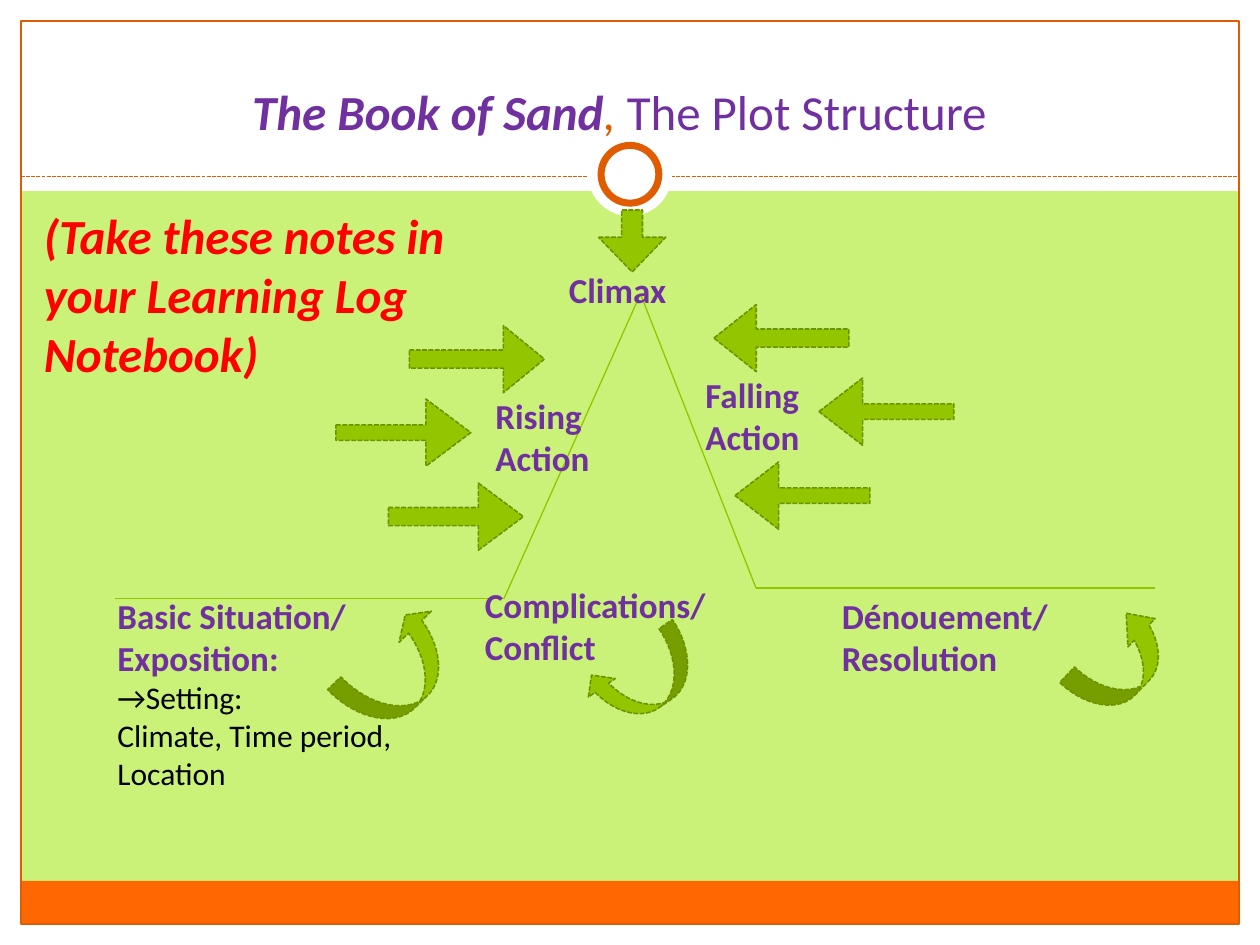
from lxml.etree import SubElement
from pptx import Presentation
from pptx.dml.color import RGBColor
from pptx.enum.dml import MSO_LINE
from pptx.enum.shapes import MSO_CONNECTOR, MSO_SHAPE
from pptx.enum.text import MSO_ANCHOR, PP_ALIGN
from pptx.oxml.ns import qn
from pptx.util import Inches, Pt

WHITE, GREEN, DARK_GREEN = "FFFFFF", "94C600", "6D9200"
ORANGE, PURPLE, RED, BLACK = "E15B00", "7030A0", "FF0000", "000000"
color = RGBColor.from_string

presentation = Presentation()
presentation.slide_width, presentation.slide_height = Inches(10), Inches(7.5)
cell = presentation.slide_width / 120  # grid of 120 columns by 90 rows

slide = presentation.slides.add_slide(presentation.slide_layouts[5])
slide.background.fill.solid()
slide.background.fill.fore_color.rgb = color("CAF278")


def add_figure(kind, box, fill=None, line=None, weight=0.75):
    """Add a preset shape; box is left, top, width, height in grid cells."""
    shape = slide.shapes.add_shape(kind, *[round(v * cell) for v in box])
    shape.shadow.inherit = False
    if fill:
        shape.fill.solid()
        shape.fill.fore_color.rgb = color(fill)
    else:
        shape.fill.background()
    if line:
        shape.line.color.rgb = color(line)
        shape.line.width = Pt(weight)
    else:
        shape.line.fill.background()
    return shape


def add_line(start, end, stroke):
    points = [round(v * cell) for v in (*start, *end)]
    connector = slide.shapes.add_connector(MSO_CONNECTOR.STRAIGHT, *points)
    connector.line.color.rgb = color(stroke)
    connector.line.width = Pt(0.75)
    SubElement(connector.element.spPr, qn("a:effectLst"))
    return connector


# White margins, footer band and frame
for margin in [(0, 88, 120, 2), (0, 0, 120, 18.2), (0, 0, 2, 90), (118, 0, 2, 90)]:
    add_figure(MSO_SHAPE.RECTANGLE, margin, WHITE)
add_figure(MSO_SHAPE.RECTANGLE, (2, 83.9, 116, 4.1), "FF6700")
add_figure(MSO_SHAPE.RECTANGLE, (2, 2, 116, 86), line=ORANGE)

# Dashed divider with its ring
divider = add_line((2, 16.8), (118, 16.8), ORANGE)
divider.line.dash_style = MSO_LINE.SQUARE_DOT
add_figure(MSO_SHAPE.OVAL, (56, 12.6, 8, 8), WHITE)
add_figure(MSO_SHAPE.OVAL, (57.25, 13.85, 5.5, 5.5), WHITE, ORANGE, 4)

# Title, brought in front of the header band
title = slide.shapes.title
title.element.getparent().append(title.element)
title.left, title.top, title.width, title.height = [
    round(v * cell) for v in (5, 3, 108, 11)]
title.text_frame.vertical_anchor = MSO_ANCHOR.BOTTOM
paragraph = title.text_frame.paragraphs[0]
paragraph.alignment = PP_ALIGN.CENTER
for text, tint, bold, italic in [
    ("The Book of Sand", PURPLE, True, True),
    (", ", ORANGE, False, True),
    ("The Plot Structure", PURPLE, False, False),
]:
    run = paragraph.add_run()
    run.text = text
    run.font.name, run.font.size = "Calibri", Pt(28)
    run.font.bold, run.font.italic = bold, italic
    run.font.color.rgb = color(tint)

# Plot line
plot_points = [(11, 57), (48, 57), (61, 28), (72, 56), (110, 56)]
for start, end in zip(plot_points, plot_points[1:]):
    add_line(start, end, GREEN)

# Labels: box, then paragraphs of text, size, colour, bold, italic
heading = (20, PURPLE, True, False)
detail = (18, BLACK, False, False)
note = (28, RED, True, True)
labels = [
    ((10, 56, 33, 23.9), [("Basic Situation/", heading), ("Exposition:", heading),
                          ("→Setting:", detail),
                          ("Climate, Time period, Location", detail)]),
    ((45, 55, 26, 9.3), [("Complications/", heading), ("Conflict", heading)]),
    ((46, 37, 18, 9.3), [("Rising Action", heading)]),
    ((53, 25, 15, 5.3), [("Climax", heading)]),
    ((66, 35, 17, 9.3), [("Falling Action", heading)]),
    ((79, 56, 28, 9.3), [("Dénouement/ Resolution", heading)]),
    ((3, 19, 48, 18.1), [("(Take these notes in your Learning Log Notebook)", note)]),
]
for box, lines in labels:
    frame = slide.shapes.add_textbox(*[round(v * cell) for v in box]).text_frame
    frame.word_wrap = True
    for index, (text, (size, tint, bold, italic)) in enumerate(lines):
        paragraph = frame.add_paragraph() if index else frame.paragraphs[0]
        run = paragraph.add_run()
        run.text = text
        run.font.name, run.font.size = "Calibri", Pt(size)
        run.font.bold, run.font.italic = bold, italic
        run.font.color.rgb = color(tint)

# Arrows: kind, box, rotation, adjustments
right, left = MSO_SHAPE.RIGHT_ARROW, MSO_SHAPE.LEFT_ARROW
arrow_size = (12.85, 6.4)
arrows = [
    (MSO_SHAPE.CURVED_UP_ARROW, (31.9, 60.4, 12.4, 7), 316.1, (0.25, 0.61, 0.21)),
    (MSO_SHAPE.CURVED_RIGHT_ARROW, (103.9, 57.6, 6, 11), 223.8, (0.34, 0.62, 0.39)),
    (MSO_SHAPE.CURVED_LEFT_ARROW, (58.2, 59.2, 6.2, 10.9), 55.5, ()),
    (right, (39, 31, *arrow_size), 0, (0.27, 0.61)),
    (right, (37, 46, *arrow_size), 0, (0.27, 0.67)),
    (right, (32, 38, *arrow_size), 0, (0.23, 0.67)),
    (left, (78, 36, *arrow_size), 0, (0.23, 0.65)),
    (left, (70, 44, *arrow_size), 0, (0.23, 0.65)),
    (left, (68, 29, *arrow_size), 0, (0.27, 0.63)),
    (MSO_SHAPE.DOWN_ARROW, (57, 20, 6.4, 5.9), 0, (0.31, 0.56)),
]
for kind, box, rotation, adjustments in arrows:
    arrow = add_figure(kind, box, GREEN, DARK_GREEN, 0.9)
    arrow.line.dash_style = MSO_LINE.SQUARE_DOT
    arrow.rotation = rotation
    for index, value in enumerate(adjustments):
        arrow.adjustments[index] = value

presentation.save("out.pptx")
